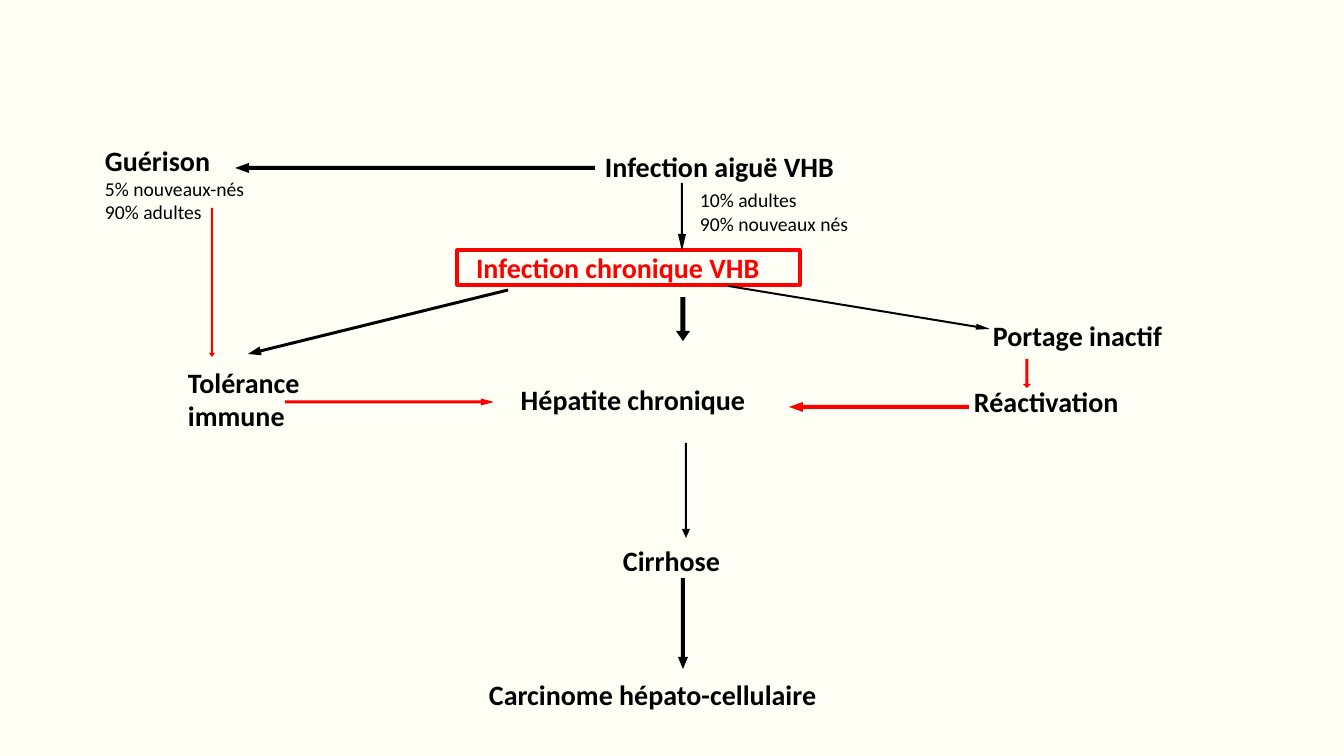
from math import hypot

from pptx import Presentation
from pptx.dml.color import RGBColor
from pptx.enum.shapes import MSO_SHAPE as SHAPE
from pptx.enum.text import MSO_ANCHOR as ANCHOR, MSO_AUTO_SIZE as AUTO, PP_ALIGN as ALIGN
from pptx.util import Pt

BLACK = RGBColor(0x00, 0x00, 0x00)
RED = RGBColor(0xFF, 0x00, 0x00)
CREAM = RGBColor(0xFF, 0xFF, 0xF6)
FONT = "Calibri"
PX = 914400 / 100.8
INSET = (1, 1)

# Stages: (left, top, width, height), heading, detail lines, alignment
STAGES = [
    ((604, 149, 307, 35), "Infection aiguë VHB", [], ALIGN.LEFT),
    ((489, 382, 287, 35), "Hépatite chronique", [], ALIGN.CENTER),
    ((622, 543, 164, 35), "Cirrhose", [], ALIGN.LEFT),
    ((992, 318, 230, 35), "Portage inactif", [], ALIGN.LEFT),
    ((973, 384, 206, 35), "Réactivation", [], ALIGN.LEFT),
    ((104, 142, 197, 83), "Guérison", ["5% nouveaux-nés", "90% adultes"], ALIGN.LEFT),
    ((187, 364, 157, 69), "Tolérance immune", [], ALIGN.LEFT),
    ((488, 677, 471, 35), "Carcinome hépato-cellulaire", [], ALIGN.LEFT),
]
CHRONIC = (457, 250, 343, 35), "Infection chronique VHB"
CHRONIC_RATE = (690, 183, 248, 57), ["10% adultes", "90% nouveaux nés"]

# Arrows: tail, tip, shaft width, head width, head length, colour
ARROWS = [
    ((682, 183), (682, 251), 2, 8, 17, BLACK),    # acute to chronic infection
    ((683, 297), (683, 341), 5, 14, 10, BLACK),   # chronic infection to hepatitis
    ((686, 443), (686, 538), 2, 8, 9, BLACK),     # hepatitis to cirrhosis
    ((683, 578), (683, 669), 4, 10, 12, BLACK),   # cirrhosis to carcinoma
    ((212, 208), (212, 357), 2, 6, 4, RED),       # recovery to tolerance
    ((595, 168), (235, 168), 4, 10, 14, BLACK),   # acute infection to recovery
    ((508, 290), (248, 354), 3, 9, 13, BLACK),    # chronic infection to tolerance
    ((1027, 359), (1027, 388), 3, 8, 4, RED),     # inactive carrier to reactivation
    ((969, 407), (789, 407), 4, 10, 14, RED),     # reactivation to hepatitis
    ((285, 402), (494, 402), 3, 7, 13, RED),      # tolerance to hepatitis
    ((728, 286), (990, 329), 2, 6, 14, BLACK),    # chronic infection to carrier
]


def emu(*lengths):
    return [round(n * PX) for n in lengths]


def write(sp, lines, inset=INSET, align=ALIGN.LEFT):
    """Fill a shape with (text, size, bold, colour) lines."""
    tf = sp.text_frame
    tf.word_wrap = True
    tf.auto_size = AUTO.SHAPE_TO_FIT_TEXT
    tf.vertical_anchor = ANCHOR.TOP
    tf.margin_left, tf.margin_top = emu(*inset)
    tf.margin_right = tf.margin_bottom = 0
    for i, (text, size, bold, color) in enumerate(lines):
        p = tf.add_paragraph() if i else tf.paragraphs[0]
        p.text = text
        p.alignment = align
        p.font.name, p.font.size, p.font.bold = FONT, Pt(size), bold
        p.font.color.rgb = color


def heading(text, color=BLACK):
    return text, 20, True, color


def details(texts):
    return [(text, 14, False, BLACK) for text in texts]


def add_arrow(s, tail, tip, shaft, head, length, color):
    """Draw a filled arrow from its axis and its widths."""
    (x0, y0), (x1, y1) = tail, tip
    span = hypot(x1 - x0, y1 - y0)
    ux, uy = (x1 - x0) / span, (y1 - y0) / span
    neck = span - length
    outline = [(0, shaft / 2), (neck, shaft / 2), (neck, head / 2), (span, 0),
               (neck, -head / 2), (neck, -shaft / 2), (0, -shaft / 2)]
    points = [emu(x0 + a * ux - b * uy, y0 + a * uy + b * ux) for a, b in outline]
    fb = s.shapes.build_freeform(*points[0])
    fb.add_line_segments(points[1:], close=True)
    sp = fb.convert_to_shape()
    sp.shadow.inherit = False
    sp.fill.solid()
    sp.fill.fore_color.rgb = color
    sp.line.fill.background()


prs = Presentation()
prs.slide_width, prs.slide_height = emu(1344, 756)
s = prs.slides.add_slide(prs.slide_layouts[6])
s.background.fill.solid()
s.background.fill.fore_color.rgb = CREAM

# Stages of the disease
for box, title, notes, align in STAGES:
    write(s.shapes.add_textbox(*emu(*box)), [heading(title)] + details(notes), align=align)

# Framed chronic infection
box, title = CHRONIC
frame = s.shapes.add_shape(SHAPE.RECTANGLE, *emu(*box))
frame.shadow.inherit = False
frame.fill.background()
frame.line.color.rgb = RED
frame.line.width = Pt(2.25)
write(frame, [heading(title, RED)], inset=(19, 1))

# Share of infections that become chronic
box, rates = CHRONIC_RATE
write(s.shapes.add_textbox(*emu(*box)), details(rates), inset=(10, 5))

# Arrows between stages
for arrow in ARROWS:
    add_arrow(s, *arrow)

prs.save("out.pptx")
